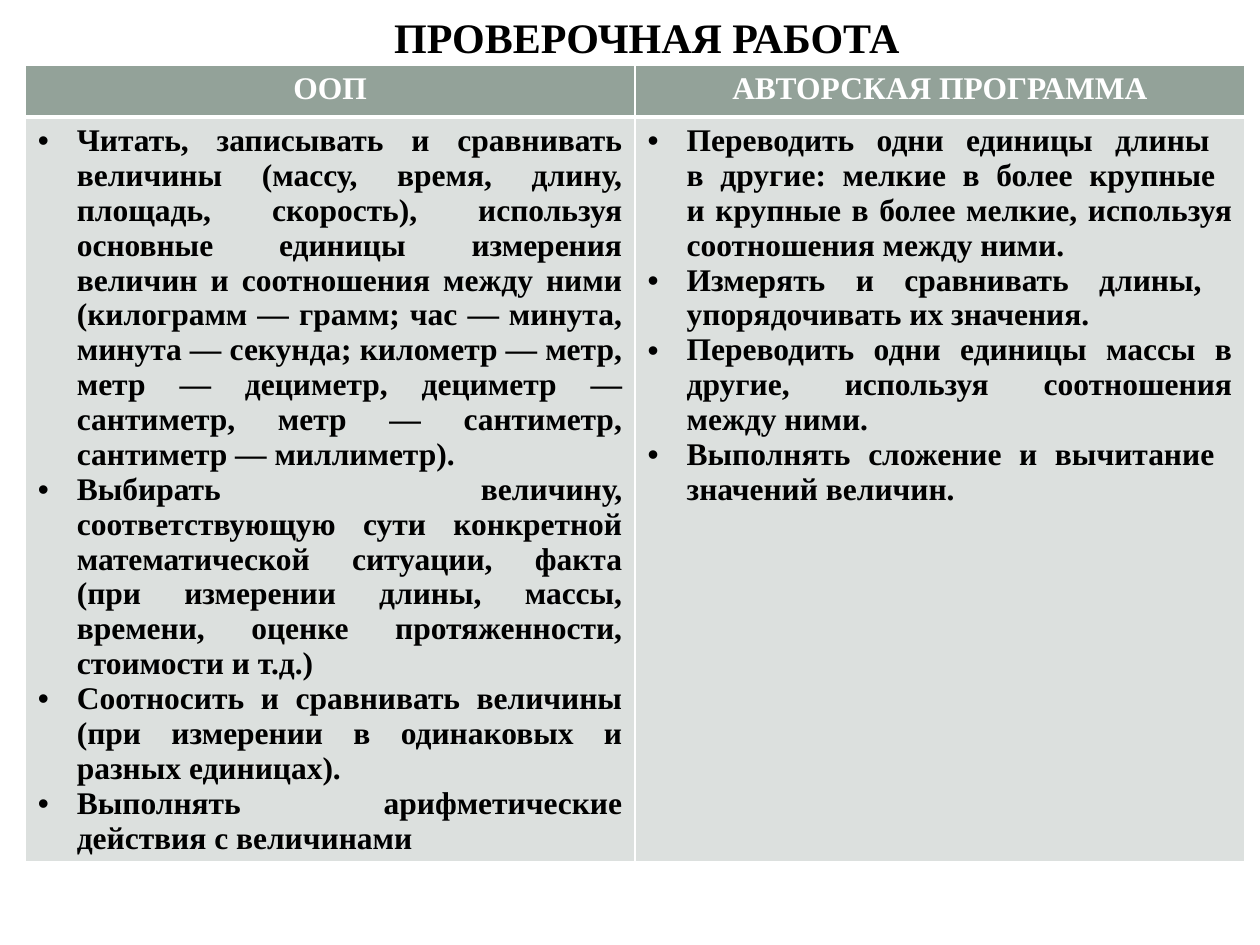
from lxml import etree
from pptx import Presentation
from pptx import util as u
from pptx.dml.color import RGBColor
from pptx.enum import text
from pptx.oxml import ns

COLORS = {"header": "93A299", "body": "DCE0DE", "white": "FFFFFF", "black": "000000"}
FONT = "Times New Roman"

deck = Presentation()
deck.slide_width, deck.slide_height = u.Inches(10), u.Inches(7.5)
W, H = deck.slide_width, deck.slide_height
page = deck.slides.add_slide(deck.slide_layouts[6])


def add_span(para, words, size, color):
    for index, line in enumerate(words.split("\n")):
        if index:
            para.add_line_break()
        span = para.add_run()
        span.text = line
        span.font.name, span.font.size, span.font.bold = FONT, u.Pt(size), True
        span.font.color.rgb = RGBColor.from_string(COLORS[color])


def style_cell(cell, fill, bottom):
    cell.fill.solid()
    cell.fill.fore_color.rgb = RGBColor.from_string(COLORS[fill])
    props = cell._tc.get_or_add_tcPr()
    for index, side in enumerate("LRTB"):
        width = bottom if side == "B" else 1
        line = etree.Element(ns.qn("a:ln" + side), w=str(u.Pt(width)))
        paint = etree.SubElement(line, ns.qn("a:solidFill"))
        etree.SubElement(paint, ns.qn("a:srgbClr"), val=COLORS["white"])
        props.insert(index, line)


columns = {
    "ООП": [
        "Читать, записывать и сравнивать величины (массу, время, длину, площадь, скорость), "
        "используя основные единицы измерения величин и соотношения между ними "
        "(килограмм — грамм; час — минута, минута — секунда; километр — метр, "
        "метр — дециметр, дециметр — сантиметр, метр — сантиметр, сантиметр — миллиметр).",
        "Выбирать величину, соответствующую сути конкретной математической ситуации, факта "
        "(при измерении длины, массы, времени, оценке протяженности, стоимости и т.д.)",
        "Соотносить и сравнивать величины (при измерении в одинаковых и разных единицах).",
        "Выполнять арифметические действия с величинами",
    ],
    "АВТОРСКАЯ ПРОГРАММА": [
        "Переводить одни единицы длины \nв другие: мелкие в более крупные \n"
        "и крупные в более мелкие, используя соотношения между ними.",
        "Измерять и сравнивать длины, \nупорядочивать их значения.",
        "Переводить одни единицы массы в другие, используя соотношения между ними.",
        "Выполнять сложение и вычитание \nзначений величин.",
    ],
}

row_heights = [u.Inches(0.41), u.Inches(5.9)]
frame = page.shapes.add_table(2, 2, int(W * 0.02), u.Inches(0.52), u.Inches(9.68), sum(row_heights))
table = frame.table
for row, height in zip(table.rows, row_heights):
    row.height = height

for column, (heading, goals) in enumerate(columns.items()):
    table.columns[column].width = u.Inches(4.84)

    head = table.cell(0, column)
    style_cell(head, "header", 3)
    para = head.text_frame.paragraphs[0]
    para.alignment = text.PP_ALIGN.CENTER
    add_span(para, heading, 18, "white")

    body = table.cell(1, column)
    style_cell(body, "body", 1)
    for index, goal in enumerate(goals):
        para = body.text_frame.add_paragraph() if index else body.text_frame.paragraphs[0]
        para.alignment = text.PP_ALIGN.JUSTIFY
        props = para._p.get_or_add_pPr()
        props.set("marL", str(u.Inches(0.31)))
        props.set("indent", str(-u.Inches(0.31)))
        etree.SubElement(props, ns.qn("a:buFont"), typeface="Arial")
        etree.SubElement(props, ns.qn("a:buChar"), char="•")
        add_span(para, goal, 18, "black")

title = page.shapes.add_textbox(u.Inches(3.03), u.Inches(0.04), u.Inches(4.25), u.Inches(0.5))
title.text_frame.word_wrap = False
title.text_frame.auto_size = text.MSO_AUTO_SIZE.SHAPE_TO_FIT_TEXT
add_span(title.text_frame.paragraphs[0], "ПРОВЕРОЧНАЯ РАБОТА", 24, "black")

deck.save("out.pptx")
